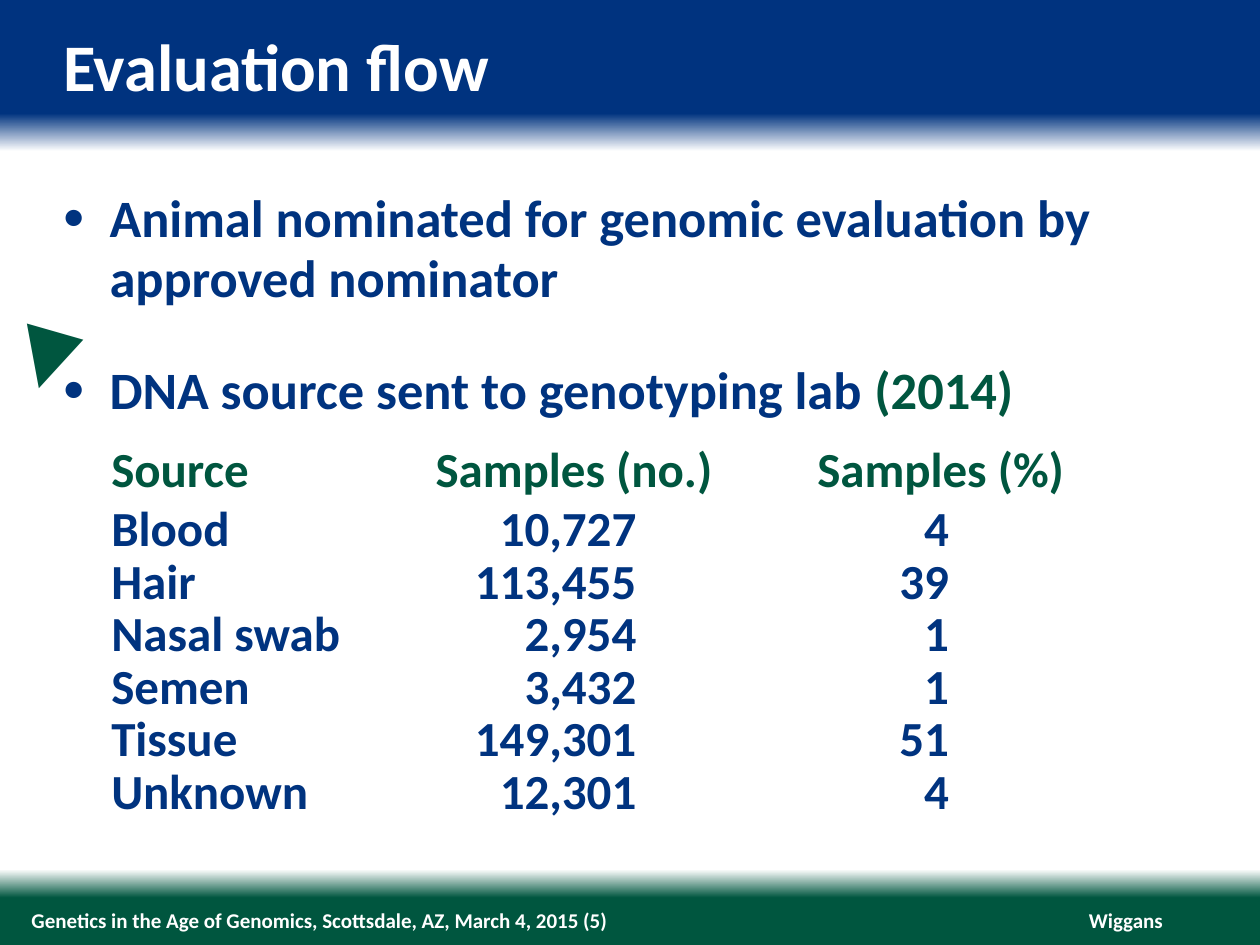
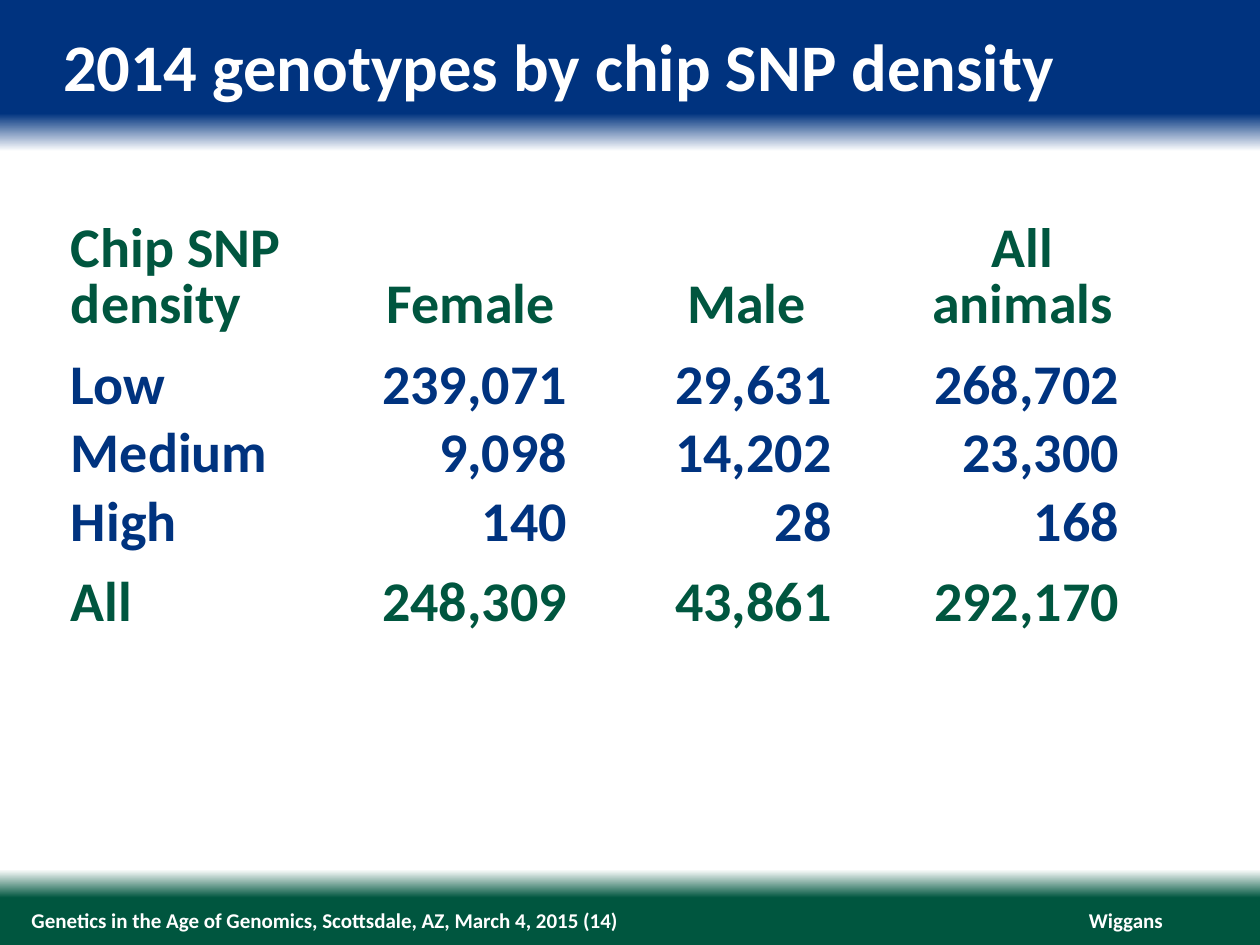
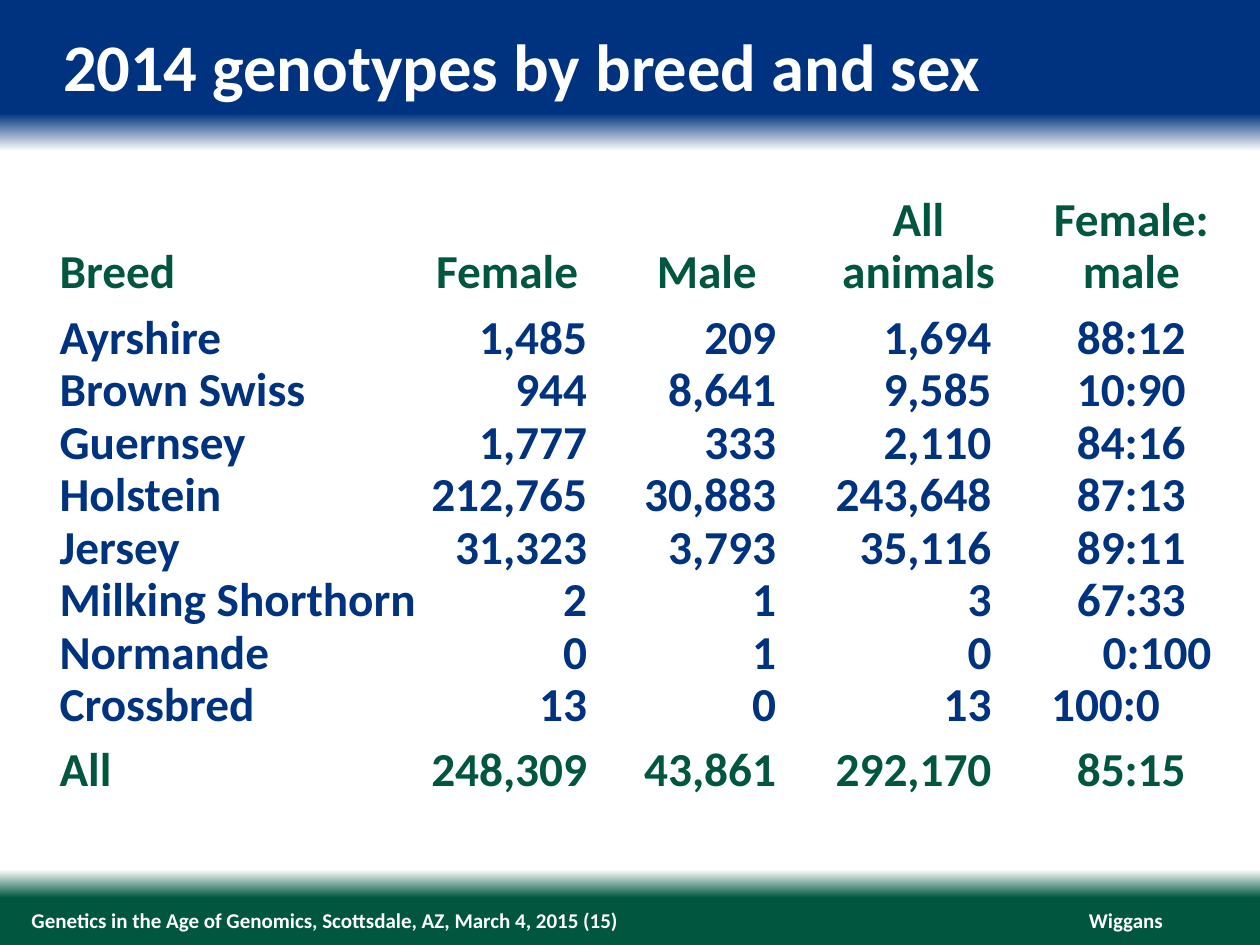
import dataclasses

import pptx
import pptx.dml.color
import pptx.enum.text
import pptx.oxml
import pptx.oxml.ns
import pptx.util
from lxml import etree

Pt = pptx.util.Pt
qn = pptx.oxml.ns.qn
LEFT = pptx.enum.text.PP_ALIGN.LEFT
CENTER = pptx.enum.text.PP_ALIGN.CENTER
RIGHT = pptx.enum.text.PP_ALIGN.RIGHT


@dataclasses.dataclass(frozen=True)
class Theme:
    blue: str = "00337F"
    green: str = "00563F"
    white: str = "FFFFFF"
    font: str = "Calibri"
    title_size: float = 38
    body_size: float = 30
    footer_size: float = 12
    marker_size: float = 44

    def background_stops(self):
        return [(0, self.blue), (12, self.blue), (16, self.white),
                (92, self.white), (95, self.green), (100, self.green)]


@dataclasses.dataclass(frozen=True)
class Column:
    width: float
    alignment: pptx.enum.text.PP_ALIGN = RIGHT
    left: float = 0
    right: float = 0
    header_left: float = 0
    header_alignment: pptx.enum.text.PP_ALIGN = CENTER


def label_column(width):
    return Column(width, LEFT, 5.3, 5.3, 5.3, LEFT)


class Deck:
    def __init__(self, theme):
        self.theme = theme
        self.presentation = pptx.Presentation()
        self.presentation.slide_width = Pt(720)
        self.presentation.slide_height = Pt(540)
        self.slide = None
        self.paint_background()

    def paint_background(self):
        master = self.presentation.slide_master
        fill = master.background.fill
        fill.gradient()
        fill.gradient_angle = 270
        stop_list = master.element.find(".//" + qn("a:gsLst"))
        for stop in list(stop_list):
            stop_list.remove(stop)
        for position, color in self.theme.background_stops():
            stop = etree.SubElement(stop_list, qn("a:gs"), pos=str(position * 1000))
            etree.SubElement(stop, qn("a:srgbClr"), val=color)

    def add_slide(self, title, number, layout_index=5):
        layout = self.presentation.slide_layouts[layout_index]
        self.slide = self.presentation.slides.add_slide(layout)
        frame = self.prepare(self.slide.shapes.title, 36, 14.4, 648, 46)
        self.add_text(frame.paragraphs[0], title, self.theme.title_size, self.theme.white)
        self.add_footer("Wiggans", 622, 42.5, RIGHT, False)
        self.add_footer("Genetics in the Age of Genomics, Scottsdale, AZ, "
                        f"March 4, 2015 ({number})", 18, 534, LEFT, True)

    def prepare(self, shape, left, top, width, height):
        shape.left, shape.top = Pt(left), Pt(top)
        shape.width, shape.height = Pt(width), Pt(height)
        frame = shape.text_frame
        frame.margin_left = frame.margin_right = 0
        frame.margin_top = frame.margin_bottom = 0
        frame.word_wrap = True
        frame.auto_size = pptx.enum.text.MSO_AUTO_SIZE.SHAPE_TO_FIT_TEXT
        frame.vertical_anchor = pptx.enum.text.MSO_ANCHOR.TOP
        return frame

    def add_text(self, paragraph, text, size, color, alignment=LEFT, bold=True):
        paragraph.alignment = alignment
        run = paragraph.add_run()
        run.text = text
        run.font.name = self.theme.font
        run.font.size = Pt(size)
        run.font.bold = bold
        run.font.color.rgb = pptx.dml.color.RGBColor.from_string(color)

    def add_text_box(self, left, top, width, height):
        shape = self.slide.shapes.add_textbox(0, 0, 0, 0)
        return shape, self.prepare(shape, left, top, width, height)

    def add_footer(self, text, left, width, alignment, wraps):
        _, frame = self.add_text_box(left, 518.4, width, 14.4)
        frame.word_wrap = wraps
        frame.vertical_anchor = pptx.enum.text.MSO_ANCHOR.MIDDLE
        self.add_text(frame.paragraphs[0], text, self.theme.footer_size,
                      self.theme.white, alignment)

    def add_marker(self, text, left, top, width, height, rotation):
        shape, frame = self.add_text_box(left, top, width, height)
        frame.margin_left = frame.margin_right = Pt(7.2)
        frame.margin_top = frame.margin_bottom = Pt(3.6)
        shape.rotation = rotation
        self.add_text(frame.paragraphs[0], text, self.theme.marker_size,
                      self.theme.green, bold=False)

    def add_bullet(self, paragraph):
        properties = paragraph._p.get_or_add_pPr()
        properties.set("marL", str(Pt(26.6)))
        properties.set("indent", str(-Pt(26.6)))
        color = etree.SubElement(properties, qn("a:buClr"))
        etree.SubElement(color, qn("a:srgbClr"), val=self.theme.blue)
        etree.SubElement(properties, qn("a:buSzPct"), val="67000")
        etree.SubElement(properties, qn("a:buFont"), typeface=self.theme.font)
        etree.SubElement(properties, qn("a:buChar"), char="●")

    def add_list(self, items, left, top, width, height):
        frame = self.prepare(self.slide.placeholders[1], left, top, width, height)
        for index, runs in enumerate(items):
            paragraph = frame.add_paragraph() if index else frame.paragraphs[0]
            self.add_bullet(paragraph)
            paragraph.line_spacing = Pt(34)
            paragraph.space_before = Pt(0)
            paragraph.space_after = Pt(30)
            for text, color in runs:
                self.add_text(paragraph, text, self.theme.body_size, color)

    def add_table(self, left, top, columns, header, rows, size, row_height,
                  header_height, header_spacing, row_spacing, gap, overrides=None):
        overrides = overrides or {}
        heights = [header_height]
        for index, row in enumerate(rows):
            starts_group = index == 0 or row[0] == "All"
            heights.append(row_height + (gap if starts_group else 0))
        width = sum(column.width for column in columns)
        table = self.slide.shapes.add_table(
            len(heights), len(columns), Pt(left), Pt(top), Pt(width), Pt(sum(heights))).table
        table.first_row = table.horz_banding = False
        for table_column, column in zip(table.columns, columns):
            table_column.width = Pt(column.width)
        for table_row, height in zip(table.rows, heights):
            table_row.height = Pt(height)
        for column_index, (column, text) in enumerate(zip(columns, header)):
            right = 5.3 if column_index == 0 else 0
            self.fill_cell(table.cell(0, column_index), text, size, self.theme.green,
                           column.header_alignment, column.header_left, right, header_spacing)
        for row_index, row in enumerate(rows, 1):
            color = self.theme.green if row[0] == "All" else self.theme.blue
            for column_index, (column, text) in enumerate(zip(columns, row)):
                self.fill_cell(table.cell(row_index, column_index), text, size, color,
                               overrides.get(text, column.alignment),
                               column.left, column.right, row_spacing)

    def fill_cell(self, cell, text, size, color, alignment, left, right, spacing):
        cell.fill.background()
        cell.vertical_anchor = pptx.enum.text.MSO_ANCHOR.BOTTOM
        cell.margin_left, cell.margin_right = Pt(left), Pt(right)
        cell.margin_top = cell.margin_bottom = 0
        for index, line in enumerate(text.split("\n")):
            frame = cell.text_frame
            paragraph = frame.add_paragraph() if index else frame.paragraphs[0]
            if spacing:
                paragraph.line_spacing = Pt(spacing)
            self.add_text(paragraph, line, size, color, alignment)


def add_evaluation_flow(deck):
    theme = deck.theme
    deck.add_slide("Evaluation flow", 5, layout_index=1)
    deck.add_list([
        [("Animal nominated for genomic evaluation by approved nominator", theme.blue)],
        [("DNA source sent to genotyping lab ", theme.blue), ("(2014)", theme.green)],
    ], 36, 108, 648, 133)
    deck.add_marker("▼", 5, 169.2, 41, 60.5, 16.1)
    deck.add_table(
        58.3, 256.3,
        [label_column(158.4), Column(222.5, right=75.6), Column(196.6, right=93.6)],
        ["Source", "Samples (no.)", "Samples (%)"],
        [["Blood", "10,727", "4"],
         ["Hair", "113,455", "39"],
         ["Nasal swab", "2,954", "1"],
         ["Semen", "3,432", "1"],
         ["Tissue", "149,301", "51"],
         ["Unknown", "12,301", "4"]],
        size=28, row_height=30, header_height=30,
        header_spacing=30, row_spacing=30, gap=3.6)


def add_chip_density(deck):
    deck.add_slide("2014 genotypes by chip SNP density", 14)
    deck.add_table(
        35.3, 129.6,
        [label_column(167.8), Column(131.8, right=10.8),
         Column(162, right=21.6, header_left=21.6), Column(175, right=32.4)],
        ["Chip SNP density", "Female", "Male", "All\nanimals"],
        [["Low", "239,071", "29,631", "268,702"],
         ["Medium", "9,098", "14,202", "23,300"],
         ["High", "140", "28", "168"],
         ["All", "248,309", "43,861", "292,170"]],
        size=32, row_height=39, header_height=64,
        header_spacing=32, row_spacing=None, gap=7.2)


def add_breed_and_sex(deck):
    deck.add_slide("2014 genotypes by breed and sex", 15)
    deck.add_table(
        28.8, 112.3,
        [label_column(215.3), Column(91.4), Column(118.8, right=10.8, header_left=18),
         Column(141.1, right=28.8), Column(102.2, CENTER, 5.3, 5.3)],
        ["Breed", "Female", "Male", "All\nanimals", "Female:\nmale"],
        [["Ayrshire", "1,485", "209", "1,694", "88:12"],
         ["Brown Swiss", "944", "8,641", "9,585", "10:90"],
         ["Guernsey", "1,777", "333", "2,110", "84:16"],
         ["Holstein", "212,765", "30,883", "243,648", "87:13"],
         ["Jersey", "31,323", "3,793", "35,116", "89:11"],
         ["Milking Shorthorn", "2", "1", "3", "67:33"],
         ["Normande", "0", "1", "0", "0:100"],
         ["Crossbred", "13", "0", "13", "100:0"],
         ["All", "248,309", "43,861", "292,170", "85:15"]],
        size=27, row_height=30, header_height=60,
        header_spacing=30, row_spacing=30, gap=7.2,
        overrides={"0:100": RIGHT, "100:0": LEFT})


def main():
    deck = Deck(Theme())
    add_evaluation_flow(deck)
    add_chip_density(deck)
    add_breed_and_sex(deck)
    deck.presentation.save("out.pptx")


if __name__ == "__main__":
    main()
